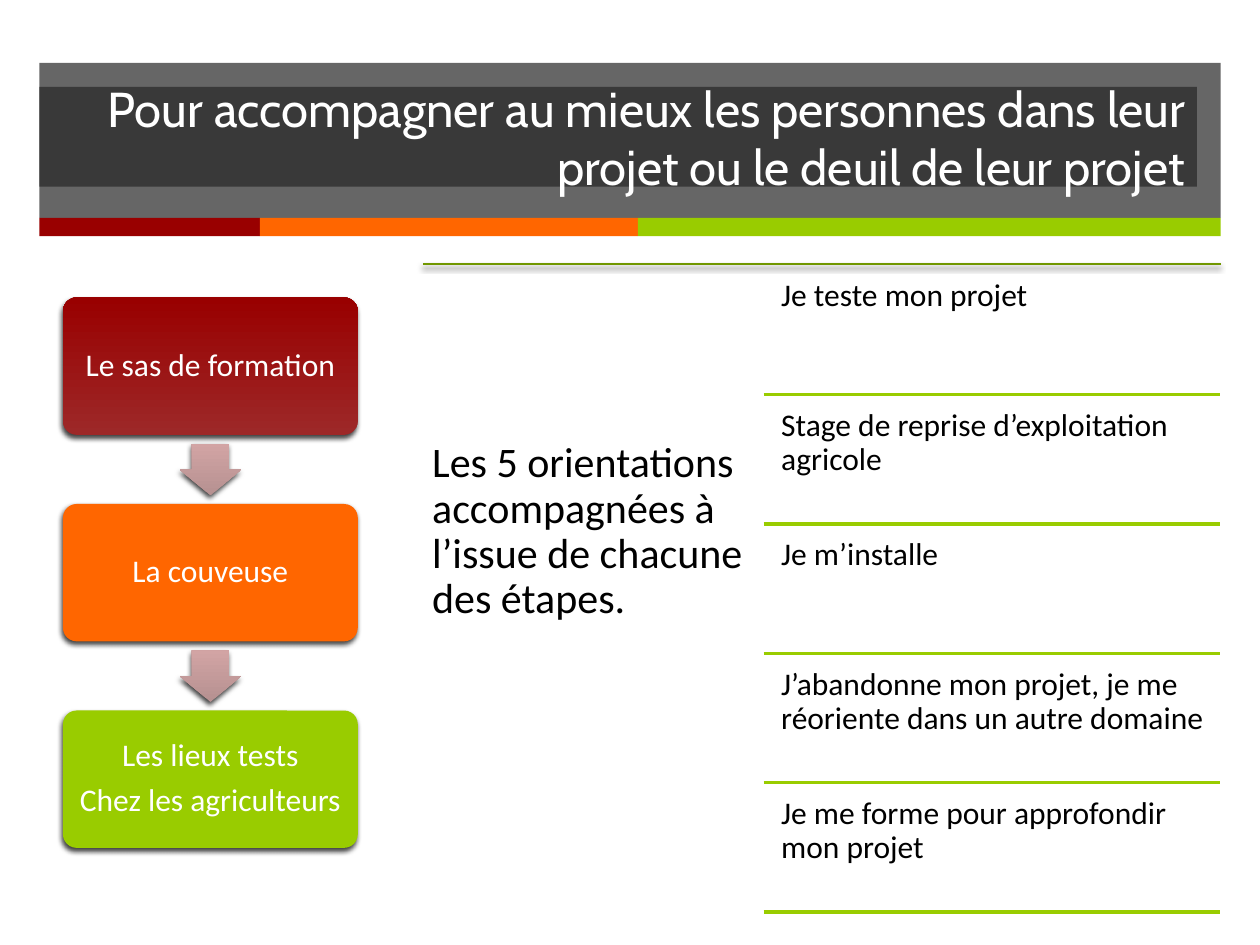
from dataclasses import dataclass

from lxml.etree import SubElement
from pptx import Presentation
from pptx.dml.color import RGBColor
from pptx.enum.shapes import MSO_CONNECTOR as Connector, MSO_SHAPE as Preset
from pptx.enum.text import MSO_ANCHOR as Anchor, PP_ALIGN as Align
from pptx.oxml.ns import qn
from pptx.util import Pt


@dataclass(frozen=True)
class Theme:
    dark: str = "262626"
    white: str = "FFFFFF"
    black: str = "000000"
    red: str = "990000"
    red_soft: str = "9D2828"
    orange: str = "FF6600"
    green: str = "99CC00"
    green_dark: str = "719700"
    arrow_light: str = "D2A4A4"
    arrow_dark: str = "B69191"
    title_font: str = "Cabin"
    body_font: str = "Calibri"
    title_size: int = 28
    lead_size: int = 24
    body_size: int = 18


class SlideBuilder:
    def __init__(self, slide, theme):
        self.slide = slide
        self.theme = theme

    def block(self, preset, box, colors, opacity=100, shadow=False, adjustments=(), rotation=0):
        shape = self.slide.shapes.add_shape(preset, *map(Pt, box))
        shape.rotation = rotation
        for index, value in enumerate(adjustments):
            shape.adjustments[index] = value
        shape.line.fill.background()
        self.paint(shape, colors, opacity)
        shape.shadow.inherit = False
        if shadow:
            self.drop_shadow(shape._element.spPr.find(qn("a:effectLst")))
        return shape

    def paint(self, shape, colors, opacity):
        fill = shape.fill
        properties = shape._element.spPr
        if len(colors) == 1:
            fill.solid()
            fill.fore_color.rgb = RGBColor.from_string(colors[0])
            if opacity < 100:
                color = properties.find(qn("a:solidFill"))[0]
                SubElement(color, qn("a:alpha"), val=str(opacity * 1000))
            return
        fill.gradient()
        fill.gradient_angle = 90
        for stop, color in zip(fill.gradient_stops, colors):
            stop.color.rgb = RGBColor.from_string(color)
        properties.find(qn("a:gradFill")).set("rotWithShape", "0")

    def drop_shadow(self, effects):
        shadow = SubElement(
            effects, qn("a:outerShdw"), blurRad=str(Pt(3)), dist=str(Pt(2)),
            dir=str(110 * 60000), rotWithShape="0",
        )
        color = SubElement(shadow, qn("a:srgbClr"), val=self.theme.black)
        SubElement(color, qn("a:alpha"), val="75000")

    def line(self, left, right, top, color, width, shadow=False):
        line = self.slide.shapes.add_connector(
            Connector.STRAIGHT, Pt(left), Pt(top), Pt(right), Pt(top)
        )
        line.line.color.rgb = RGBColor.from_string(color)
        line.line.width = Pt(width)
        effects = SubElement(line._element.spPr, qn("a:effectLst"))
        if shadow:
            self.drop_shadow(effects)

    def fill_text(self, frame, lines, size, color, font, align, spacing=None, after=0):
        frame.word_wrap = True
        for index, text in enumerate(lines):
            paragraph = frame.add_paragraph() if index else frame.paragraphs[0]
            paragraph.alignment = align
            paragraph.line_spacing = spacing
            paragraph.space_after = Pt(after)
            run = paragraph.add_run()
            run.text = text
            run.font.size = Pt(size)
            run.font.name = font
            run.font.color.rgb = RGBColor.from_string(color)

    def title(self, box, text):
        shape = self.block(Preset.RECTANGLE, box, [self.theme.dark], opacity=70)
        shape.text_frame.vertical_anchor = Anchor.MIDDLE
        self.fill_text(shape.text_frame, [text], self.theme.title_size,
                       self.theme.white, self.theme.title_font, Align.RIGHT)

    def text(self, box, lines, size, color, align=Align.LEFT, anchor=Anchor.TOP, top_inset=5):
        frame = self.slide.shapes.add_textbox(*map(Pt, box)).text_frame
        frame.margin_left = frame.margin_right = frame.margin_bottom = Pt(5)
        frame.margin_top = Pt(top_inset)
        frame.vertical_anchor = anchor
        self.fill_text(frame, lines, size, color, self.theme.body_font, align,
                       spacing=0.9, after=round(size * 0.35, 1))

    def step(self, top, lines, colors):
        self.block(Preset.ROUNDED_RECTANGLE, (36, top, 168.5, 78.5), colors,
                   shadow=True, adjustments=[0.1])
        self.text((38.3, top + 2.3, 163.9, 73.9), lines, self.theme.body_size,
                  self.theme.white, Align.CENTER, Anchor.MIDDLE)

    def step_arrow(self, top):
        self.block(Preset.RIGHT_ARROW, (105.5, top, 29.5, 35.3),
                   [self.theme.arrow_dark, self.theme.arrow_light],
                   shadow=True, adjustments=[0.6, 0.5], rotation=90)


def main():
    presentation = Presentation()
    presentation.slide_width, presentation.slide_height = Pt(720), Pt(540)
    theme = Theme()
    builder = SlideBuilder(presentation.slides.add_slide(presentation.slide_layouts[6]), theme)

    left, right = 22.5, 697.5
    builder.block(Preset.RECTANGLE, (left, 36, right - left, 88.5), [theme.dark], opacity=70)
    stripe_left = left
    for width, color in ((126, theme.red), (216, theme.orange), (333, theme.green)):
        builder.block(Preset.RECTANGLE, (stripe_left, 124.5, width, 10.5), [color])
        stripe_left += width
    builder.title(
        (left, 49.7, 661.5, 57),
        "Pour accompagner au mieux les personnes dans leur projet ou le deuil de leur projet",
    )

    steps = [
        (["Le sas de formation"], [theme.red_soft, theme.red]),
        (["La couveuse"], [theme.orange]),
        (["Les lieux tests", "Chez les agriculteurs"], [theme.green]),
    ]
    for index, (lines, colors) in enumerate(steps):
        top = 170 + 118 * index
        if index:
            builder.step_arrow(top - 37.3)
        builder.step(top, lines, colors)

    builder.line(242, right, 151, theme.green_dark, 1, shadow=True)
    builder.text(
        (242, 151, 194.4, 374.4),
        ["Les 5 orientations accompagnées à l’issue de chacune des étapes."],
        theme.lead_size, theme.black, top_inset=104,
    )
    orientations = [
        "Je teste mon projet",
        "Stage de reprise d’exploitation agricole",
        "Je m’installe",
        "J’abandonne mon projet, je me réoriente dans un autre domaine",
        "Je me forme pour approfondir mon projet",
    ]
    for index, orientation in enumerate(orientations):
        top = 154.8 + 74 * index
        builder.text((441.4, top, 255.6, 70.5), [orientation], theme.body_size, theme.black)
        builder.line(436.4, 697, top + 70.5, theme.green, 2)

    presentation.save("out.pptx")


if __name__ == "__main__":
    main()
